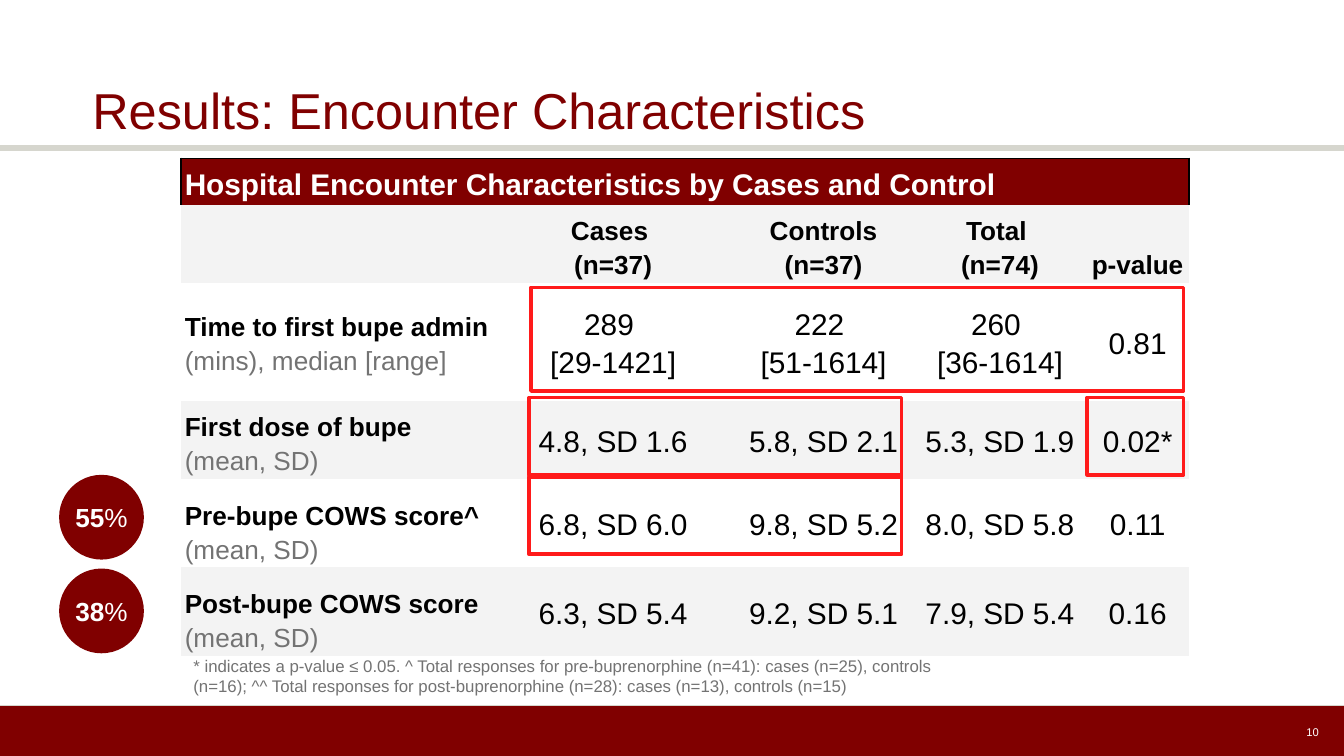
from lxml.etree import SubElement
from pptx import Presentation
from pptx.dml.color import RGBColor
from pptx.enum.shapes import MSO_CONNECTOR, MSO_SHAPE
from pptx.enum.text import MSO_ANCHOR, MSO_AUTO_SIZE, PP_ALIGN
from pptx.oxml import parse_xml
from pptx.oxml.ns import nsdecls, qn
from pptx.util import Pt

MAROON = RGBColor(0x80, 0x00, 0x00)
STONE = RGBColor(0xD6, 0xD6, 0xCE)
GRAY = RGBColor(0x73, 0x73, 0x73)
BAND = RGBColor(0xF3, 0xF3, 0xF3)
RED = RGBColor(0xFF, 0x1A, 0x1A)
WHITE = RGBColor(0xFF, 0xFF, 0xFF)
BLACK = RGBColor(0x00, 0x00, 0x00)
NO_STYLE = "{2D5ABB26-0587-4C30-8999-92F81FD0307C}"


def add_run(paragraph, text, size, color, bold=False):
    run = paragraph.add_run()
    run.text = text
    run.font.name = "Arial"
    run.font.size = Pt(size)
    run.font.color.rgb = color
    run.font.bold = bold


def add_box(kind, left, top, width, height, fill=None, line=None):
    box = slide.shapes.add_shape(kind, Pt(left), Pt(top), Pt(width), Pt(height))
    box.shadow.inherit = False
    if fill is None:
        box.fill.background()
    else:
        box.fill.solid()
        box.fill.fore_color.rgb = fill
    if line is None:
        box.line.fill.background()
    else:
        box.line.color.rgb = line
        box.line.width = Pt(2)


prs = Presentation()
prs.slide_width, prs.slide_height = Pt(720), Pt(405)
slide = prs.slides.add_slide(prs.slide_layouts[5])

add_box(MSO_SHAPE.RECTANGLE, 0, 378, 720, 27, fill=MAROON)
for y, weight in [(79.2, 3), (378, 0.75)]:
    rule = slide.shapes.add_connector(MSO_CONNECTOR.STRAIGHT, Pt(0), Pt(y), Pt(720), Pt(y))
    rule.line.color.rgb = STONE
    rule.line.width = Pt(weight)
    SubElement(rule._element.spPr, qn("a:effectLst"))

title = slide.shapes.title
title.left, title.top, title.width, title.height = Pt(49.5), Pt(21.6), Pt(621), Pt(77.6)
heading = title.text_frame
heading.auto_size = MSO_AUTO_SIZE.NONE
heading.vertical_anchor = MSO_ANCHOR.MIDDLE
heading.margin_left = heading.margin_right = 0
heading.margin_top = heading.margin_bottom = Pt(3)
heading.paragraphs[0].alignment = PP_ALIGN.LEFT
heading.paragraphs[0].line_spacing = 0.9
add_run(heading.paragraphs[0], "Results: Encounter Characteristics", 27, MAROON)

page_number = slide.shapes.add_textbox(Pt(508.5), Pt(381.6), Pt(203), Pt(21.6)).text_frame
page_number.word_wrap = True
page_number.vertical_anchor = MSO_ANCHOR.MIDDLE
page_number.margin_left = page_number.margin_right = Pt(5)
page_number.margin_top = page_number.margin_bottom = Pt(3)
page_number.paragraphs[0].alignment = PP_ALIGN.RIGHT
add_run(page_number.paragraphs[0], "10", 6, WHITE)

column_widths = [167, 129, 96.5, 92.5, 55]
row_heights = [23.5, 39, 63.5, 39, 47.5, 47.5]
column_heads = [["Cases ", "(n=37)"], ["Controls (n=37)"], ["Total ", "(n=74)"], ["p-value"]]
measures = [
    ([["Time to first bupe admin ", "(mins), median [range]"]],
     [["289 ", "[29-1421]"], ["222 ", "[51-1614]"], ["260 ", "[36-1614]"], ["0.81"]]),
    ([["First dose of bupe"], ["", "(mean, SD)"]],
     [["4.8, SD 1.6"], ["5.8, SD 2.1"], ["5.3, SD 1.9"], ["0.02*"]]),
    ([["Pre-bupe COWS score^ ", "(mean, SD)"]],
     [["6.8, SD 6.0"], ["9.8, SD 5.2"], ["8.0, SD 5.8"], ["0.11"]]),
    ([["Post-bupe COWS score ", "(mean, SD)"]],
     [["6.3, SD 5.4"], ["9.2, SD 5.1"], ["7.9, SD 5.4"], ["0.16"]]),
]

frame = slide.shapes.add_table(6, 5, Pt(97), Pt(84.8), Pt(sum(column_widths)), Pt(sum(row_heights)))
table = frame.table
table.first_row = table.horz_banding = False
table._tbl.tblPr.find(qn("a:tableStyleId")).text = NO_STYLE
for column, width in zip(table.columns, column_widths):
    column.width = Pt(width)
for r, height in enumerate(row_heights):
    table.rows[r].height = Pt(height)
    for c in range(5):
        cell = table.cell(r, c)
        cell.margin_left = cell.margin_right = Pt(2)
        cell.margin_top = cell.margin_bottom = Pt(1.5)
        middle = r == 2 or (r > 2 and c > 0)
        cell.vertical_anchor = MSO_ANCHOR.MIDDLE if middle else MSO_ANCHOR.BOTTOM
        if r == 0:
            for side in ("lnL", "lnR", "lnT"):
                cell._tc.get_or_add_tcPr().append(parse_xml(
                    f'<a:{side} {nsdecls("a")} w="9525"><a:solidFill>'
                    f'<a:srgbClr val="{BLACK}"/></a:solidFill></a:{side}>'))
        cell.fill.solid()
        cell.fill.fore_color.rgb = MAROON if r == 0 else BAND if r % 2 else WHITE

        if r == 0:
            lines = [["Hospital Encounter Characteristics by Cases and Control"]] if c == 0 else []
            styles = [(16, WHITE, True)]
        elif c == 0:
            lines = measures[r - 2][0] if r > 1 else []
            styles = [(14, BLACK, True), (14, GRAY, False)]
        else:
            values = column_heads if r == 1 else measures[r - 2][1]
            lines = [[line] for line in values[c - 1]]
            styles = [(14, BLACK, True) if r == 1 else (16, BLACK, False)]
        for i, line in enumerate(lines):
            paragraph = cell.text_frame.paragraphs[0] if i == 0 else cell.text_frame.add_paragraph()
            paragraph.line_spacing = 1.15
            paragraph.alignment = PP_ALIGN.CENTER if c else PP_ALIGN.LEFT
            for text, style in zip(line, styles):
                if text:
                    add_run(paragraph, text, *style)
table.cell(0, 0).merge(table.cell(0, 4))

footnote = slide.shapes.add_textbox(Pt(96.5), Pt(344.2), Pt(425.5), Pt(38)).text_frame
footnote.word_wrap = True
footnote.margin_left = footnote.margin_right = Pt(7.2)
footnote.margin_top = footnote.margin_bottom = Pt(7.2)
add_run(footnote.paragraphs[0],
        "* indicates a p-value ≤ 0.05. ^ Total responses for pre-buprenorphine (n=41): "
        "cases (n=25), controls (n=16); ^^ Total responses for post-buprenorphine (n=28): "
        "cases (n=13), controls (n=15)", 9, GRAY)

for highlight in [(284.5, 154, 349.5, 55.5), (283.5, 213, 199.5, 41.5),
                  (582.5, 213, 51.5, 41.5), (283.5, 255.5, 199.5, 41.5)]:
    add_box(MSO_SHAPE.RECTANGLE, *highlight, line=RED)

for share, top in [("55", 254.4), ("38", 304.6)]:
    add_box(MSO_SHAPE.OVAL, 31.7, top, 45.4, 45.4, fill=MAROON)
    label = slide.shapes.add_textbox(Pt(31.7), Pt(top + 10.6), Pt(45.4), Pt(24.2)).text_frame
    label.word_wrap = True
    label.auto_size = MSO_AUTO_SIZE.SHAPE_TO_FIT_TEXT
    label.vertical_anchor = MSO_ANCHOR.MIDDLE
    label.paragraphs[0].alignment = PP_ALIGN.CENTER
    add_run(label.paragraphs[0], share, 14, WHITE, True)
    add_run(label.paragraphs[0], "%", 14, WHITE)

prs.save("out.pptx")
